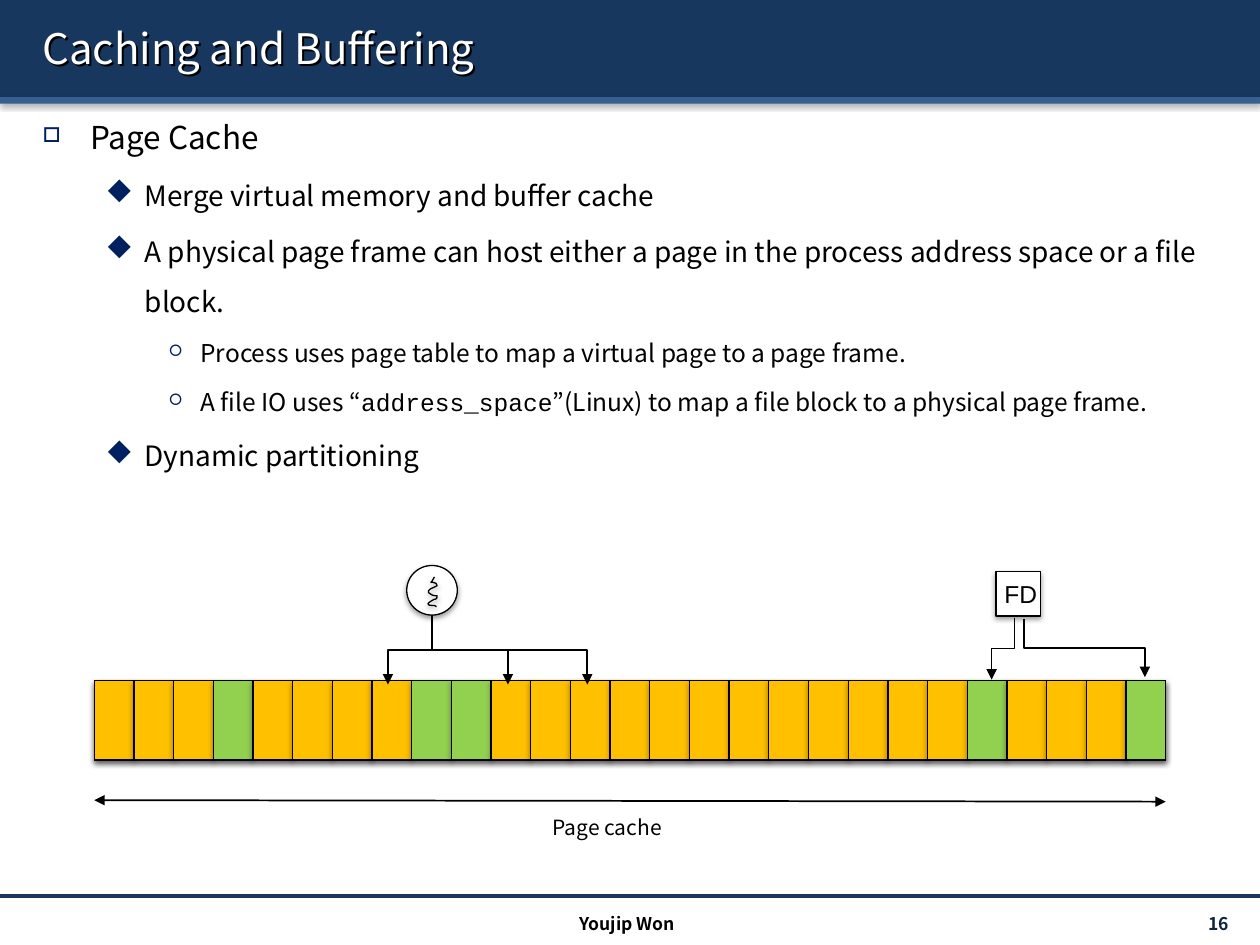
from dataclasses import dataclass
from typing import NamedTuple

from lxml.etree import SubElement
from pptx import Presentation
from pptx.dml.color import RGBColor
from pptx.enum.shapes import MSO_CONNECTOR as Connector, MSO_SHAPE as Preset
from pptx.enum.text import MSO_ANCHOR as Anchor, PP_ALIGN as Align
from pptx.oxml.ns import qn
from pptx.util import Cm, Pt


@dataclass(frozen=True)
class Theme:
    font: str = "Noto Sans CJK KR"
    code_font: str = "Courier New"
    label_font: str = "Arial"
    bullet_font: str = "Wingdings"
    navy: str = "17375E"
    stripe: str = "376092"
    bullet: str = "002060"
    number: str = "0F243E"
    black: str = "000000"
    white: str = "FFFFFF"
    process_page: str = "FFC000"
    file_block: str = "92D050"
    title_size: int = 24
    level_sizes: tuple = (18, 16, 14)
    caption_size: int = 12
    label_size: int = 14
    footer_size: int = 10


class Box(NamedTuple):
    left: float
    top: float
    width: float
    height: float


class Point(NamedTuple):
    x: float
    y: float


class Bullet(NamedTuple):
    char: str
    indent: float
    hanging: float
    percent: int


class Item(NamedTuple):
    level: int
    runs: tuple


THEME = Theme()
# Square, diamond and ring in the symbol font
BULLETS = (Bullet("o", 0.96, 0.96, 65), Bullet("u", 2.06, 0.79, 100),
           Bullet("¡", 3.18, 0.64, 65))
# Every second run of an item is code
ITEMS = (
    Item(0, ("Page Cache",)),
    Item(1, ("Merge virtual memory and buffer cache",)),
    Item(1, ("A physical page frame can host either a page in the process "
             "address space or a file block.",)),
    Item(2, ("Process uses page table to map a virtual page to a page frame.",)),
    Item(2, ("A file IO uses “", "address_space",
             "”(Linux) to map a file block to a physical page frame.")),
    Item(1, ("Dynamic partitioning",)),
)
FRAME_COUNT = 27
FILE_FRAMES = {3, 8, 9, 22, 26}
CACHE = Box(1.9, 13.72, 21.6, 1.6)
THREAD_START = Point(8.71, 12.4)
ARROWS = (
    (THREAD_START, Point(7.82, 13.8)),
    (THREAD_START, Point(10.24, 13.8)),
    (THREAD_START, Point(11.84, 13.8)),
    (Point(20.45, 12.45), Point(19.99, 13.7)),
    (Point(20.65, 12.48), Point(23.08, 13.65)),
)
# Thread squiggle: start, then two controls and an end per curve
SQUIGGLE_START = Point(8.76, 11.63)
SQUIGGLE = (
    ((8.66, 11.84), (8.66, 11.68), (8.79, 11.76)),
    ((8.79, 11.76), (8.81, 11.79), (8.81, 11.81)),
    ((8.66, 11.89), (8.71, 11.84), (8.64, 11.91)),
    ((8.64, 11.94), (8.64, 11.96), (8.66, 11.96)),
    ((8.71, 12.01), (8.76, 12.01), (8.81, 12.01)),
    ((8.81, 12.04), (8.81, 12.07), (8.79, 12.07)),
    ((8.79, 12.09), (8.76, 12.07), (8.74, 12.09)),
    ((8.74, 12.09), (8.69, 12.12), (8.66, 12.14)),
    ((8.66, 12.14), (8.61, 12.17), (8.64, 12.19)),
    ((8.66, 12.22), (8.74, 12.19), (8.79, 12.22)),
)


def color(value: str) -> RGBColor:
    return RGBColor.from_string(value)


def add_shadow(shape, blur: float = 3.1, distance: float = 1.6, angle: int = 90,
               alpha: int = 38) -> None:
    shape.shadow.inherit = False
    effects = shape._element.spPr.find(qn("a:effectLst"))
    shadow = SubElement(effects, qn("a:outerShdw"), blurRad=str(Pt(blur)),
                        dist=str(Pt(distance)), dir=str(angle * 60000), rotWithShape="0")
    tint = SubElement(shadow, qn("a:srgbClr"), val=THEME.black)
    SubElement(tint, qn("a:alpha"), val=str(alpha * 1000))


def outline(shape, width: float, line: str = THEME.black) -> None:
    shape.line.color.rgb = color(line)
    shape.line.width = Pt(width)


def add_block(slide, preset, box: Box, fill: str, bordered: bool = True) -> None:
    shape = slide.shapes.add_shape(preset, *map(Cm, box))
    shape.fill.solid()
    shape.fill.fore_color.rgb = color(fill)
    if bordered:
        outline(shape, 0.75)
    else:
        shape.line.fill.background()
    add_shadow(shape)


def add_line(slide, kind, start: Point, end: Point, width: float = 1,
             line: str = THEME.black, heads: tuple = ()):
    connector = slide.shapes.add_connector(kind, *map(Cm, start + end))
    outline(connector, width, line)
    for head in heads:
        SubElement(connector.line._get_or_add_ln(), qn(head), type="triangle")
    SubElement(connector._element.spPr, qn("a:effectLst"))
    return connector


def add_drop_arrow(slide, start: Point, end: Point) -> None:
    """Elbow that leaves downwards, runs sideways and ends downwards."""
    middle_x, middle_y = (start.x + end.x) / 2, (start.y + end.y) / 2
    half_run, half_drop = abs(end.x - start.x) / 2, (end.y - start.y) / 2
    side = 1 if end.x > start.x else -1
    connector = add_line(slide, Connector.ELBOW,
                         Point(middle_x + side * half_drop, middle_y - half_run),
                         Point(middle_x - side * half_drop, middle_y + half_run),
                         heads=("a:tailEnd",))
    turn = 270 if side > 0 else 90
    connector._element.spPr.find(qn("a:xfrm")).set("rot", str(turn * 60000))


def style_run(run, size: int, ink: str = THEME.black, font: str = THEME.font,
              bold: bool = False) -> None:
    run.font.size, run.font.name, run.font.bold = Pt(size), font, bold
    run.font.color.rgb = color(ink)


def add_label(slide, box: Box, text: str, size: int, align=Align.CENTER,
              wrap: bool = True, anchor=Anchor.TOP, **style) -> None:
    frame = slide.shapes.add_textbox(*map(Cm, box)).text_frame
    frame.text, frame.word_wrap, frame.vertical_anchor = text, wrap, anchor
    paragraph = frame.paragraphs[0]
    paragraph.alignment = align
    style_run(paragraph.runs[0], size, **style)


def add_item(paragraph, item: Item, first: bool) -> None:
    bullet, size = BULLETS[item.level], THEME.level_sizes[item.level]
    properties = paragraph._p.get_or_add_pPr()
    properties.set("marL", str(Cm(bullet.indent)))
    properties.set("indent", str(-Cm(bullet.hanging)))
    SubElement(SubElement(properties, qn("a:buClr")), qn("a:srgbClr"), val=THEME.bullet)
    SubElement(properties, qn("a:buSzPct"), val=str(bullet.percent * 1000))
    SubElement(properties, qn("a:buFont"), typeface=THEME.bullet_font,
               pitchFamily="2", charset="2")
    SubElement(properties, qn("a:buChar"), char=bullet.char)
    paragraph.level, paragraph.line_spacing = item.level, 1.5
    paragraph.space_before = Pt(0 if first else round(size * 0.2, 1))
    for index, text in enumerate(item.runs):
        run = paragraph.add_run()
        run.text = text
        style_run(run, size, font=THEME.code_font if index % 2 else THEME.font)


def add_title(slide, text: str) -> None:
    title = slide.shapes.title
    title.left, title.top, title.width, title.height = map(Cm, (0.6, 0.15, 24.4, 1.63))
    frame = title.text_frame
    frame.text, frame.vertical_anchor = text, Anchor.MIDDLE
    frame.paragraphs[0].alignment = Align.LEFT
    style_run(frame.paragraphs[0].runs[0], THEME.title_size, THEME.white)
    add_shadow(title, blur=0, distance=1.6, angle=45, alpha=100)
    slide.shapes._spTree.append(title._element)  # in front of the band


def add_squiggle(slide) -> None:
    points, start = [], SQUIGGLE_START
    for first, second, end in SQUIGGLE:
        for t in (0.25, 0.5, 0.75, 1):
            weights = ((1 - t) ** 3, 3 * t * (1 - t) ** 2, 3 * t * t * (1 - t), t ** 3)
            points.append([Cm(sum(w * p[axis] for w, p in
                                  zip(weights, (start, first, second, end))))
                           for axis in (0, 1)])
        start = end
    points.append([Cm(8.79), Cm(12.24)])
    builder = slide.shapes.build_freeform(*map(Cm, SQUIGGLE_START))
    builder.add_line_segments(points, close=False)
    shape = builder.convert_to_shape()
    shape.fill.background()
    outline(shape, 0.75)
    add_shadow(shape)


def main() -> None:
    presentation = Presentation()
    presentation.slide_width, presentation.slide_height = Cm(25.4), Cm(19.05)
    slide = presentation.slides.add_slide(presentation.slide_layouts[5])

    # Header and footer
    add_block(slide, Preset.RECTANGLE, Box(0, 0, 25.4, 1.96), THEME.navy, False)
    add_block(slide, Preset.RECTANGLE, Box(0, 1.96, 25.4, 0.13), THEME.stripe, False)
    add_line(slide, Connector.STRAIGHT, Point(0, 18.06), Point(25.4, 18.06), 2, THEME.navy)
    add_title(slide, "Caching and Buffering")
    add_label(slide, Box(22.12, 18.31, 2.9, 0.61), "16", THEME.footer_size, Align.RIGHT,
              anchor=Anchor.MIDDLE, ink=THEME.number, bold=True)
    add_label(slide, Box(8.43, 18.29, 8.43, 0.61), "Youjip Won", THEME.footer_size, bold=True)

    # Bulleted text
    body = slide.shapes.add_textbox(*map(Cm, (0.61, 1.88, 24.4, 15.3))).text_frame
    body.word_wrap = True
    for index, item in enumerate(ITEMS):
        add_item(body.add_paragraph() if index else body.paragraphs[0], item, index == 0)

    # Page cache and its frames
    add_block(slide, Preset.RECTANGLE, CACHE, THEME.white)
    pitch = CACHE.width / FRAME_COUNT
    for index in range(FRAME_COUNT):
        add_block(slide, Preset.RECTANGLE,
                  Box(CACHE.left + index * pitch, CACHE.top, pitch, CACHE.height),
                  THEME.file_block if index in FILE_FRAMES else THEME.process_page)
    add_line(slide, Connector.STRAIGHT, Point(1.9, 16.13), Point(23.5, 16.16),
             heads=("a:headEnd", "a:tailEnd"))
    add_label(slide, Box(8.99, 16.3, 6.5, 0.76), "Page cache", THEME.caption_size)

    # Thread, file descriptor and their arrows
    add_block(slide, Preset.OVAL, Box(8.2, 11.4, 1.02, 1), THEME.white)
    add_squiggle(slide)
    add_block(slide, Preset.RECTANGLE, Box(20.08, 11.52, 0.9, 0.9), THEME.white)
    for start, end in ARROWS:
        add_drop_arrow(slide, start, end)
    add_label(slide, Box(20, 11.55, 1.3, 0.86), "FD", THEME.label_size, Align.LEFT,
              wrap=False, font=THEME.label_font)

    presentation.save("out.pptx")


if __name__ == "__main__":
    main()
